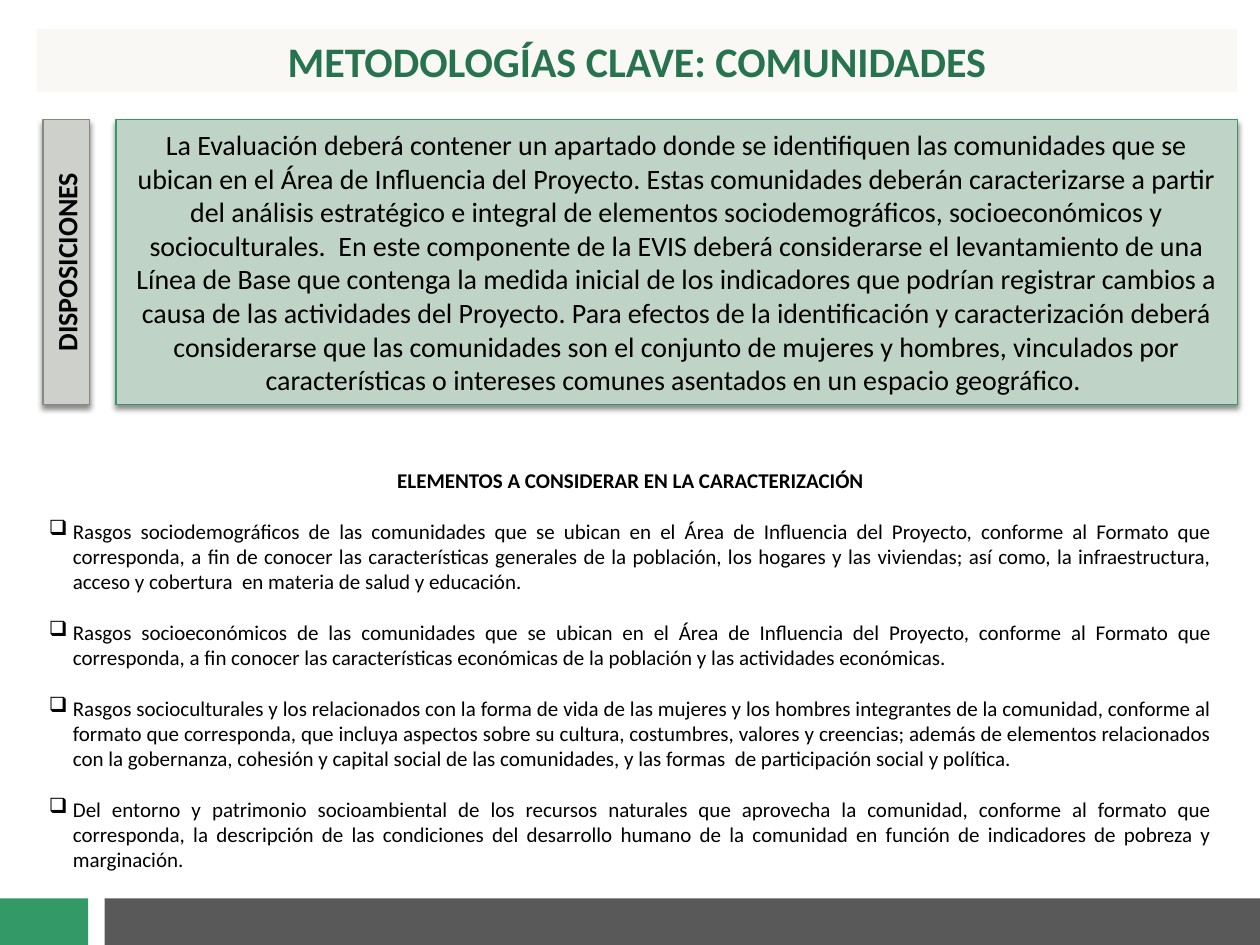
from dataclasses import dataclass

from lxml.etree import SubElement
from pptx import Presentation
from pptx.dml.color import RGBColor
from pptx.enum.shapes import MSO_SHAPE
from pptx.enum.text import MSO_ANCHOR, PP_ALIGN
from pptx.oxml.ns import qn
from pptx.util import Inches, Pt


@dataclass(frozen=True)
class Theme:
    font: str = "Calibri"
    black: str = "000000"
    title: str = "26734D"
    title_fill: str = "F9F8F5"
    green: str = "339966"
    mint: str = "BFD4C6"
    gray: str = "CED0CC"
    gray_line: str = "858B7C"
    dark: str = "595959"
    title_size: float = 24
    body_size: float = 16
    list_size: float = 12
    list_gap: float = 14.6
    line_width: float = 0.79


THEME = Theme()

TITLE = "METODOLOGÍAS CLAVE: COMUNIDADES"
LABEL = "DISPOSICIONES"
PROVISION = (
    "La Evaluación deberá contener un apartado donde se identifiquen las comunidades que se ubican "
    "en el Área de Influencia del Proyecto. Estas comunidades deberán caracterizarse a partir del "
    "análisis estratégico e integral de elementos sociodemográficos, socioeconómicos y "
    "socioculturales.  En este componente de la EVIS deberá considerarse el levantamiento de una "
    "Línea de Base que contenga la medida inicial de los indicadores que podrían registrar cambios "
    "a causa de las actividades del Proyecto. Para efectos de la identificación y caracterización "
    "deberá considerarse que las comunidades son el conjunto de mujeres y hombres, vinculados por "
    "características o intereses comunes asentados en un espacio geográfico. "
)
HEADING = "ELEMENTOS A CONSIDERAR EN LA CARACTERIZACIÓN"
ELEMENTS = [
    "Rasgos sociodemográficos de las comunidades que se ubican en el Área de Influencia del "
    "Proyecto, conforme al Formato que corresponda, a fin de conocer las características generales "
    "de la población, los hogares y las viviendas; así como, la infraestructura, acceso y "
    "cobertura  en materia de salud y educación.",
    "Rasgos socioeconómicos de las comunidades que se ubican en el Área de Influencia del "
    "Proyecto, conforme al Formato que corresponda, a fin conocer las características económicas "
    "de la población y las actividades económicas.",
    "Rasgos socioculturales y los relacionados con la forma de vida de las mujeres y los hombres "
    "integrantes de la comunidad, conforme al formato que corresponda, que incluya aspectos sobre "
    "su cultura, costumbres, valores y creencias; además de elementos relacionados con la "
    "gobernanza, cohesión y capital social de las comunidades, y las formas  de participación "
    "social y política.",
    "Del entorno y patrimonio socioambiental de los recursos naturales que aprovecha la comunidad, "
    "conforme al formato que corresponda, la descripción de las condiciones del desarrollo humano "
    "de la comunidad en función de indicadores de pobreza y marginación.",
]


def set_attrs(obj, **values):
    for name, value in values.items():
        setattr(obj, name, value)


def write(p, text, size, color=THEME.black, bold=False, align=PP_ALIGN.CENTER):
    p.alignment = align
    r = p.add_run()
    r.text = text
    set_attrs(r.font, name=THEME.font, size=Pt(size), bold=bold)
    r.font.color.rgb = RGBColor.from_string(color)


def add_rect(s, x, y, w, h, fill, line=None):
    sp = s.shapes.add_shape(MSO_SHAPE.RECTANGLE, Inches(x), Inches(y), Inches(w), Inches(h))
    sp.shadow.inherit = False
    sp.fill.solid()
    sp.fill.fore_color.rgb = RGBColor.from_string(fill)
    if line:
        sp.line.color.rgb = RGBColor.from_string(line)
        sp.line.width = Pt(THEME.line_width)
    else:
        sp.line.fill.background()
    set_attrs(sp.text_frame, word_wrap=True, vertical_anchor=MSO_ANCHOR.MIDDLE)
    return sp


def add_shadow(sp):
    effects = sp._element.spPr.find(qn("a:effectLst"))
    shadow = SubElement(effects, qn("a:outerShdw"), blurRad=str(Pt(3)), dist=str(Pt(2.4)),
                        dir="5400000", algn="ctr", rotWithShape="0")
    color = SubElement(shadow, qn("a:srgbClr"), val=THEME.black)
    SubElement(color, qn("a:alpha"), val="45000")


def add_bullet(p, indent):
    pPr = p._p.get_or_add_pPr()
    pPr.set("marL", str(Inches(indent)))
    pPr.set("indent", str(-Inches(indent)))
    SubElement(pPr, qn("a:buChar"), char="❑")


def add_footer(s, x, y, w, h):
    accent, gap = 0.7, 0.13
    start = accent + gap
    add_rect(s, x + start, y, w - start, h, THEME.dark)
    add_rect(s, x, y, accent, h, THEME.green)


def add_title(s, x, y, w, h):
    sp = add_rect(s, x, y, w, h, THEME.title_fill)
    write(sp.text_frame.paragraphs[0], TITLE, THEME.title_size, THEME.title, True)


def add_provision(s, x, y, w, h):
    label_w, gap = 0.37, 0.21
    offset = label_w + gap
    panel = add_rect(s, x + offset, y, w - offset, h, THEME.mint, THEME.green)
    write(panel.text_frame.paragraphs[0], PROVISION, THEME.body_size)
    label = add_rect(s, x + (label_w - h) / 2, y + (h - label_w) / 2, h, label_w,
                     THEME.gray, THEME.gray_line)
    label.rotation = 270
    write(label.text_frame.paragraphs[0], LABEL, THEME.body_size, bold=True)
    for sp in (panel, label):
        add_shadow(sp)


def add_elements(s, x, y, w, h):
    tf = s.shapes.add_textbox(Inches(x), Inches(y), Inches(w), Inches(h)).text_frame
    tf.word_wrap = True
    write(tf.paragraphs[0], HEADING, THEME.list_size, bold=True)
    for text in ELEMENTS:
        p = tf.add_paragraph()
        add_bullet(p, 0.19)
        p.space_before = Pt(THEME.list_gap)
        write(p, text, THEME.list_size, align=PP_ALIGN.JUSTIFY)


def main():
    prs = Presentation()
    set_attrs(prs, slide_width=Inches(10), slide_height=Inches(7.5))
    s = prs.slides.add_slide(prs.slide_layouts[6])
    add_footer(s, 0, 7.13, 10, 0.37)
    add_title(s, 0.29, 0.23, 9.53, 0.5)
    add_provision(s, 0.34, 0.95, 9.48, 2.26)
    add_elements(s, 0.29, 3.66, 9.43, 3.33)
    prs.save("out.pptx")


if __name__ == "__main__":
    main()
